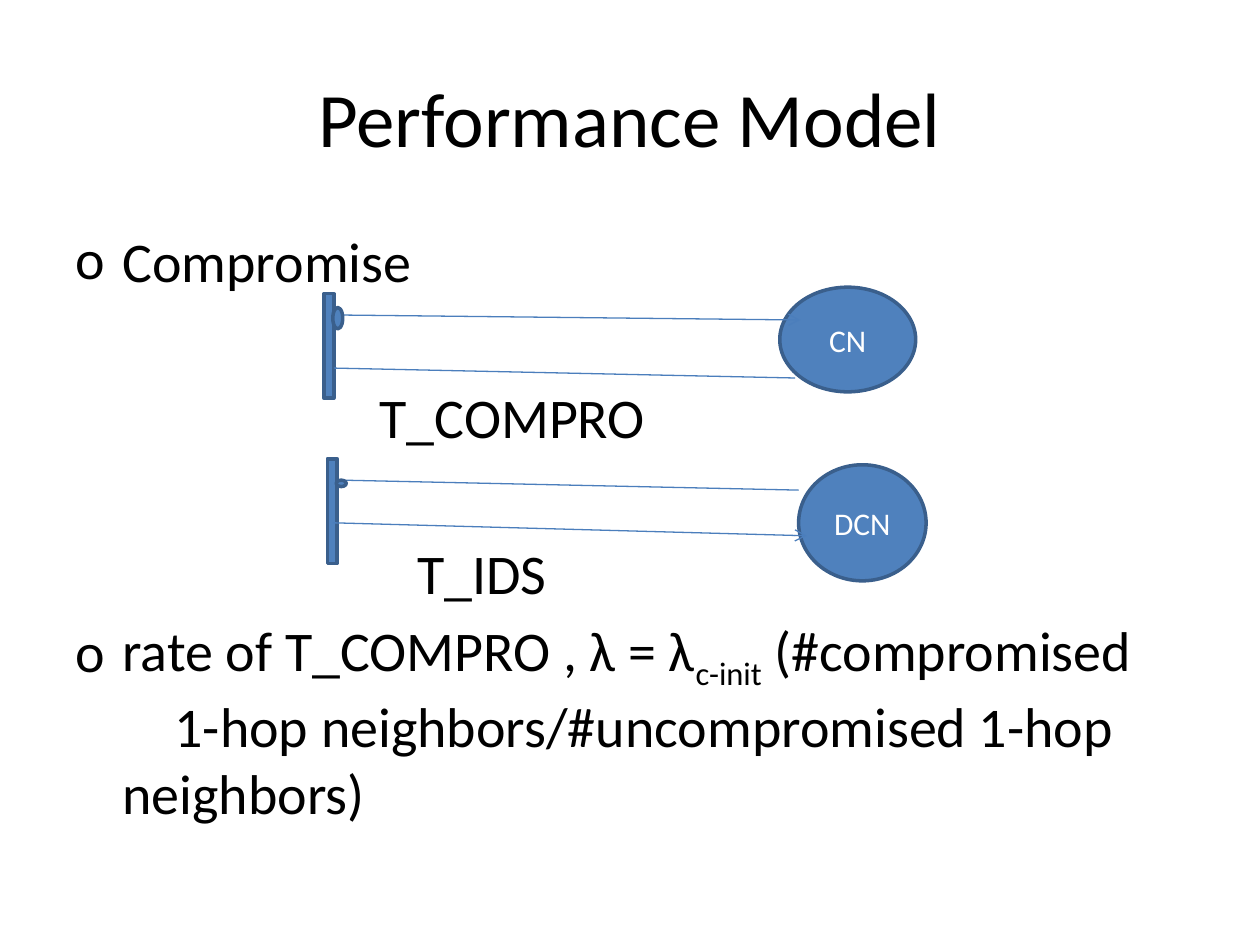
from dataclasses import dataclass

from lxml import etree
from pptx import Presentation
from pptx import util as u
from pptx.dml.color import RGBColor
from pptx.enum import shapes, text
from pptx.oxml.ns import qn


@dataclass(frozen=True)
class Theme:
    font: str = "Calibri"
    ink: str = "000000"
    light: str = "FFFFFF"
    fill: str = "4F81BD"
    edge: str = "3A5F8C"
    wire: str = "4B7EBC"
    title: int = 44
    body: int = 32
    label: int = 18
    border: float = 2
    thin: float = 0.75


def write(par, words, *, font, size, color, base=None):
    """Add a run; base shifts it above or below the line, in percent."""
    run = par.add_run()
    run.text = words
    run.font.name = font
    run.font.size = u.Pt(size)
    run.font.color.rgb = RGBColor.from_string(color)
    if base:
        run.font._element.set("baseline", str(base * 1000))


def indent(par, left, first=0, bullet=None, font=None):
    """Set the left margin and first-line indent in cm, with a bullet if given."""
    props = par._p.get_or_add_pPr()
    props.set("marL", str(u.Cm(left)))
    props.set("indent", str(u.Cm(first)))
    if bullet:
        etree.SubElement(props, qn("a:buFont"), typeface=font)
        etree.SubElement(props, qn("a:buChar"), char=bullet)


class Deck:
    def __init__(self, theme):
        self.theme = theme
        self.file = Presentation()
        self.file.slide_width, self.file.slide_height = u.Cm(25.4), u.Cm(19.05)
        self.slide = self.file.slides.add_slide(self.file.slide_layouts[6])

    def box(self, *area, anchor=text.MSO_ANCHOR.TOP):
        frame = self.slide.shapes.add_textbox(*map(u.Cm, area)).text_frame
        frame.word_wrap = True
        frame.vertical_anchor = anchor
        return frame

    def title(self, words, *area):
        par = self.box(*area, anchor=text.MSO_ANCHOR.MIDDLE).paragraphs[0]
        par.alignment = text.PP_ALIGN.CENTER
        t = self.theme
        write(par, words, font=t.font, size=t.title, color=t.ink)

    def body(self, rows, *area):
        """Rows hold runs, left margin, first indent, bullet and space before."""
        t = self.theme
        frame = self.box(*area)
        for i, (runs, left, first, bullet, gap) in enumerate(rows):
            par = frame.add_paragraph() if i else frame.paragraphs[0]
            par.space_before = u.Pt(gap)
            indent(par, left, first, bullet, t.font)
            for words, base in runs:
                write(par, words, font=t.font, size=t.body, color=t.ink, base=base)

    def shape(self, kind, *area, label=None):
        t = self.theme
        item = self.slide.shapes.add_shape(kind, *map(u.Cm, area))
        item.shadow.inherit = False
        item.fill.solid()
        item.fill.fore_color.rgb = RGBColor.from_string(t.fill)
        item.line.color.rgb = RGBColor.from_string(t.edge)
        item.line.width = u.Pt(t.border)
        if label:
            par = item.text_frame.paragraphs[0]
            par.alignment = text.PP_ALIGN.CENTER
            write(par, label, font=t.font, size=t.label, color=t.light)

    def line(self, *ends, arrow=False):
        t = self.theme
        item = self.slide.shapes.add_connector(
            shapes.MSO_CONNECTOR.STRAIGHT, *map(u.Cm, ends))
        item.line.color.rgb = RGBColor.from_string(t.wire)
        item.line.width = u.Pt(t.thin)
        if arrow:
            etree.SubElement(item.line._get_or_add_ln(), qn("a:tailEnd"), type="arrow")
        etree.SubElement(item._element.spPr, qn("a:effectLst"))


def main():
    deck = Deck(Theme())
    left, width = 1.27, 22.86
    hang, gap, skip = 0.95, 5.5, 50.6

    deck.title("Performance Model", left, 0.76, width, 3.18)
    rate = [("rate of T_COMPRO , λ = λ", None), ("c-init", -25),
            (" (#compromised", None)]
    rest = "1-hop neighbors/#uncompromised 1-hop neighbors)"
    deck.body([
        ([("Compromise", None)], hang, -hang, "o", 0),
        ([("T_COMPRO", None)], 6.13, 0, None, skip),
        ([("T_IDS", None)], 6.89, 0, None, skip),
        (rate, hang, -hang, "o", gap),
        ([(rest, None)], hang, 1.05, None, 0),
    ], left, 4.45, width, 14.4)

    oval, bar = shapes.MSO_SHAPE.OVAL, shapes.MSO_SHAPE.RECTANGLE
    thick, tall = 0.2, 2.11

    # Compromise transition
    deck.shape(oval, 15.72, 5.79, 2.74, tall, label="CN")
    deck.shape(bar, 6.53, 5.92, thick, tall)
    deck.line(6.83, 6.35, 16.13, 6.45, arrow=True)
    deck.line(6.73, 7.42, 16.03, 7.62)
    deck.shape(oval, 6.71, 6.2, thick, 0.43)

    # Detection transition
    deck.shape(bar, 6.6, 9.25, thick, tall)
    deck.shape(oval, 16.1, 9.37, 2.57, 2.34, label="DCN")
    deck.line(6.71, 10.54, 16.26, 10.8, arrow=True)
    deck.line(6.93, 9.68, 16.1, 9.88)
    deck.shape(oval, 6.78, 9.68, thick, 0.13)

    deck.file.save("out.pptx")


if __name__ == "__main__":
    main()
